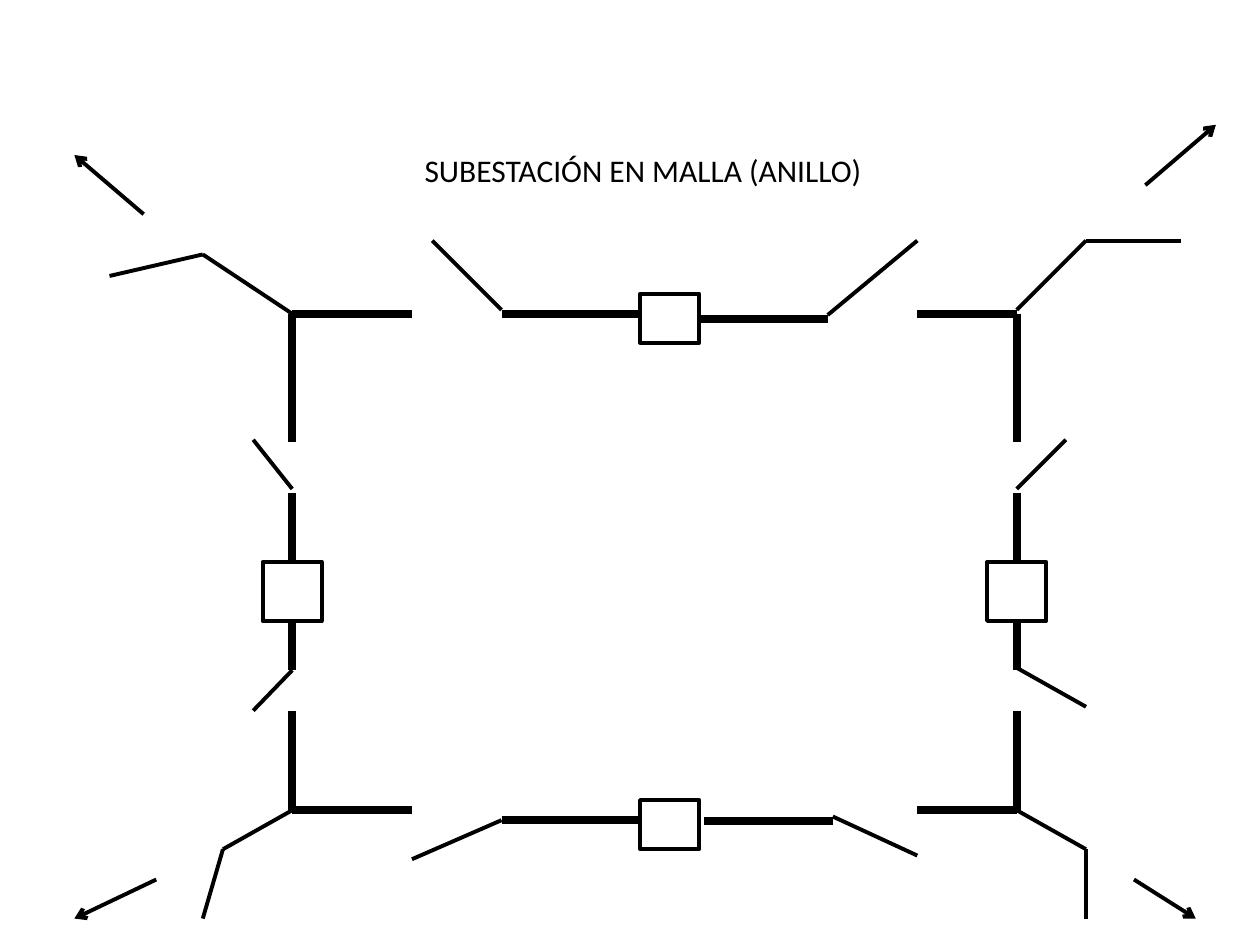
from lxml.etree import SubElement
from pptx import Presentation
from pptx.dml.color import RGBColor
from pptx.enum.shapes import MSO_CONNECTOR, MSO_SHAPE
from pptx.enum.text import MSO_ANCHOR, MSO_AUTO_SIZE, PP_ALIGN
from pptx.oxml.ns import qn
from pptx.util import Pt

BLACK = RGBColor(0x00, 0x00, 0x00)
WHITE = RGBColor(0xFF, 0xFF, 0xFF)

# Ring corners and the edges of the gaps along each side
LEFT, RIGHT, TOP, BOTTOM = 167, 581, 179.3, 463
GAP_LEFT, GAP_RIGHT = 235.4, 524.2
GAP_TOP, GAP_BOTTOM = 252.7, 406.1
BREAKER = 33.8
BREAKER_LOW = 28.1
BREAKER_X, BREAKER_Y = 365.8, 321.1


class Diagram:
    font = "Calibri"
    busbar_width = 4.5
    thin_width = 2.25

    def __init__(self, slide):
        self.slide = slide

    def line(self, start, end, width):
        connector = self.slide.shapes.add_connector(
            MSO_CONNECTOR.STRAIGHT, *(Pt(v) for v in (*start, *end)))
        connector.line.color.rgb = BLACK
        connector.line.width = Pt(width)
        SubElement(connector._element.spPr, qn("a:effectLst"))
        return connector

    def busbar(self, start, end):
        self.line(start, end, self.busbar_width)

    def blades(self, *points):
        """Draw thin lines through the points, one after another."""
        for start, end in zip(points, points[1:]):
            self.line(start, end, self.thin_width)

    def feeder_arrow(self, start, end):
        arrow = self.line(start, end, self.thin_width)
        SubElement(arrow.line._get_or_add_ln(), qn("a:tailEnd"), type="arrow")

    def breaker(self, left, top, height):
        box = self.slide.shapes.add_shape(
            MSO_SHAPE.RECTANGLE, Pt(left), Pt(top), Pt(BREAKER), Pt(height))
        box.shadow.inherit = False
        box.fill.solid()
        box.fill.fore_color.rgb = WHITE
        box.line.color.rgb = BLACK
        box.line.width = Pt(self.thin_width)

    def title(self, text, left, top, width, height):
        title = self.slide.shapes.title
        title.left, title.top = Pt(left), Pt(top)
        title.width, title.height = Pt(width), Pt(height)
        frame = title.text_frame
        frame.text = text
        frame.word_wrap = False
        frame.auto_size = MSO_AUTO_SIZE.SHAPE_TO_FIT_TEXT
        frame.vertical_anchor = MSO_ANCHOR.TOP
        paragraph = frame.paragraphs[0]
        paragraph.alignment = PP_ALIGN.LEFT
        paragraph.font.name = self.font
        paragraph.font.size = Pt(18)
        paragraph.font.color.rgb = BLACK


def draw_ring(diagram):
    for x, gap_x in ((LEFT, GAP_LEFT), (RIGHT, GAP_RIGHT)):
        for y, gap_y in ((TOP, GAP_TOP), (BOTTOM, GAP_BOTTOM)):
            diagram.busbar((x, y), (gap_x, y))
            diagram.busbar((x, y), (x, gap_y))

    for x in (LEFT, RIGHT):
        diagram.busbar((x, 281.5), (x, BREAKER_Y))
        diagram.breaker(x - BREAKER / 2, BREAKER_Y, BREAKER)
        diagram.busbar((x, 355), (x, 383))

    # Breaker top, left bar height, then right bar start, end and height
    for top, left_y, start, end, right_y in (
            (167.8, TOP, 399.6, 473, 182.2),
            (457.2, 468.7, 402.5, 475.9, 469.4)):
        diagram.busbar((286.6, left_y), (BREAKER_X, left_y))
        diagram.breaker(BREAKER_X, top, BREAKER_LOW)
        diagram.busbar((start, right_y), (end, right_y))


def draw_disconnectors(diagram):
    for hinge, tip in (
            ((286.6, 177.1), (247, 137.5)),
            ((473, 180), (GAP_RIGHT, 137.5)),
            ((RIGHT, 279.4), (609.1, 251.3)),
            ((RIGHT, 381.6), (620.6, 403.9)),
            ((LEFT, 279.4), (144.7, 251.3)),
            ((LEFT, 383), (144.7, 406.1)),
            ((286.6, 468.7), (GAP_LEFT, 491)),
            ((475.9, 466.6), (GAP_RIGHT, 488.9))):
        diagram.blades(hinge, tip)


def draw_feeders(diagram):
    # Corner, bend and tip of the blade, then the arrow's two ends
    for corner, bend, tip, start, end in (
            ((RIGHT, 177.1), (620.6, 137.5), (674.6, 137.5),
             (654.5, 105.8), (694.8, 71.3)),
            ((LEFT, TOP), (115.9, 145.4), (62.6, 157.7),
             (82.1, 122.4), (42.5, 88.6)),
            ((LEFT, BOTTOM), (127.4, 485.3), (115.9, 524.9),
             (89.3, 502.6), (42.5, 524.9)),
            ((RIGHT, BOTTOM), (620.6, 485.3), (620.6, 524.9),
             (648, 502.6), (683.3, 524.9))):
        diagram.blades(corner, bend, tip)
        diagram.feeder_arrow(start, end)


def main():
    presentation = Presentation()
    presentation.slide_width, presentation.slide_height = Pt(720), Pt(540)
    title_only = presentation.slide_layouts[5]
    diagram = Diagram(presentation.slides.add_slide(title_only))
    diagram.title("SUBESTACIÓN EN MALLA (ANILLO)", 235.4, 82.8, 266.4, 28.8)
    draw_ring(diagram)
    draw_disconnectors(diagram)
    draw_feeders(diagram)
    presentation.save("out.pptx")


if __name__ == "__main__":
    main()
